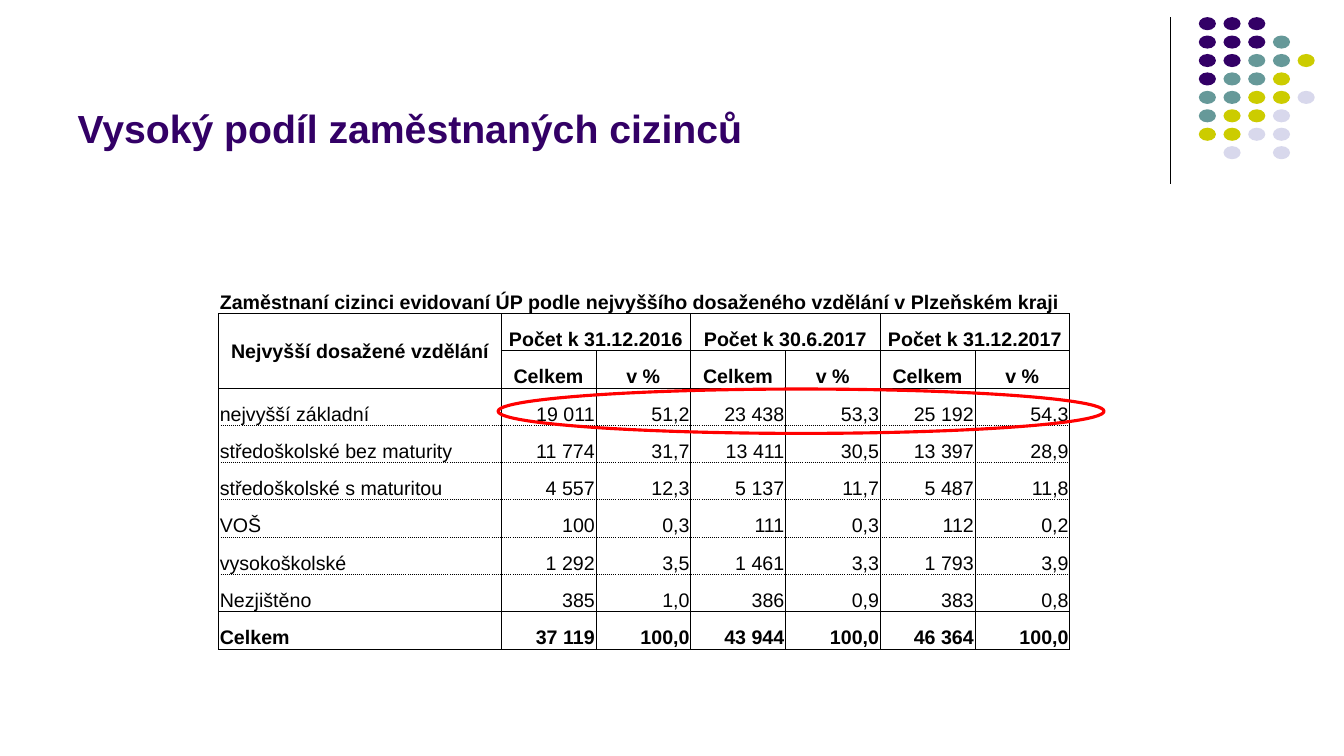
"""Build the slide on the education of employed foreigners."""
import pptx
import pptx.dml.color
import pptx.enum.shapes
import pptx.enum.text
import pptx.oxml
import pptx.oxml.ns
import pptx.util
from pptx.util import Inches

TITLE = "Vysoký podíl zaměstnaných cizinců"
HEADING = "Zaměstnaní cizinci evidovaní ÚP podle nejvyššího dosaženého vzdělání v Plzeňském kraji"
DATES = ["Počet k 31.12.2016", "Počet k 30.6.2017", "Počet k 31.12.2017"]
ROWS = [
    [HEADING] + [""] * 6,
    ["Nejvyšší dosažené vzdělání", DATES[0], "", DATES[1], "", DATES[2], ""],
    [""] + ["Celkem", "v %"] * 3,
    ["nejvyšší základní", "19 011", "51,2", "23 438", "53,3", "25 192", "54,3"],
    ["středoškolské bez maturity", "11 774", "31,7", "13 411", "30,5", "13 397", "28,9"],
    ["středoškolské s maturitou", "4 557", "12,3", "5 137", "11,7", "5 487", "11,8"],
    ["VOŠ", "100", "0,3", "111", "0,3", "112", "0,2"],
    ["vysokoškolské", "1 292", "3,5", "1 461", "3,3", "1 793", "3,9"],
    ["Nezjištěno", "385", "1,0", "386", "0,9", "383", "0,8"],
    ["Celkem", "37 119", "100,0", "43 944", "100,0", "46 364", "100,0"],
]
SPANS = [(0, 0, 0, 6), (1, 0, 2, 0), (1, 1, 1, 2), (1, 3, 1, 4), (1, 5, 1, 6)]
WIDTHS = [2.8] + [0.94] * 6
HEIGHTS = [0.65] + [0.37] * 9
DOTS = ["PPP", "PPPT", "PPTTY", "PTTY", "TTYYL", "TYYL", "YYLL", " L L"]
INKS = {"P": "330066", "T": "669999", "Y": "CCCC00", "L": "D8D8EC"}
FIRST, LAST = 3, len(ROWS) - 1
SHAPE = pptx.enum.shapes.MSO_SHAPE
ALIGN = pptx.enum.text.PP_ALIGN
ANCHOR = pptx.enum.text.MSO_ANCHOR


def tint(hue):
    return pptx.dml.color.RGBColor.from_string(hue)


def style(para, size, hue, bold, align):
    para.alignment = align
    for run in para.runs:
        font = run.font
        font.name, font.size, font.bold = "Arial", pptx.util.Pt(size), bold
        font.color.rgb = tint(hue)


def oval(slide, left, top, width, height):
    shape = slide.shapes.add_shape(
        SHAPE.OVAL, Inches(left), Inches(top), Inches(width), Inches(height))
    shape.shadow.inherit = False
    return shape


def border(cell, side, dash):
    ns = pptx.oxml.ns.nsdecls("a")
    if dash:
        body = ('<a:solidFill><a:srgbClr val="000000"/></a:solidFill>'
                f'<a:prstDash val="{dash}"/>')
    else:
        body = "<a:noFill/>"
    line = pptx.oxml.parse_xml(f'<a:ln{side} {ns} w="6350">{body}</a:ln{side}>')
    cell._tc.get_or_add_tcPr().append(line)


def edges(row):
    if row == 0:
        return {"L": None, "R": None, "T": None, "B": "solid"}
    top = "dot" if FIRST < row < LAST else "solid"
    base = "dot" if FIRST <= row < LAST - 1 else "solid"
    return {"L": "solid", "R": "solid", "T": top, "B": base}


def fill_cell(cell, text, row, col):
    cell.text_frame.text = text
    if 0 < row < FIRST:
        align = ALIGN.CENTER
    else:
        align = ALIGN.RIGHT if col else ALIGN.LEFT
    bold = row < FIRST or row == LAST
    style(cell.text_frame.paragraphs[0], 14, "000000", bold, align)
    cell.margin_left = cell.margin_right = cell.margin_top = Inches(0.01)
    cell.margin_bottom = 0
    middle = (row, col) == (1, 0)
    cell.vertical_anchor = ANCHOR.MIDDLE if middle else ANCHOR.BOTTOM
    for side, dash in edges(row).items():
        border(cell, side, dash)
    cell.fill.background()


def add_grid(slide):
    table = slide.shapes.add_table(
        len(ROWS), len(WIDTHS), Inches(2.17), Inches(2.46),
        Inches(sum(WIDTHS)), Inches(sum(HEIGHTS))).table
    table.first_row = table.horz_banding = False
    for column, width in zip(table.columns, WIDTHS):
        column.width = Inches(width)
    for line, height in zip(table.rows, HEIGHTS):
        line.height = Inches(height)
    for row, texts in enumerate(ROWS):
        for col, text in enumerate(texts):
            fill_cell(table.cell(row, col), text, row, col)
    for top, left, base, right in SPANS:
        table.cell(top, left).merge(table.cell(base, right))


def add_dots(slide):
    rule = slide.shapes.add_connector(
        pptx.enum.shapes.MSO_CONNECTOR.STRAIGHT,
        Inches(11.61), Inches(0.17), Inches(11.61), Inches(1.83))
    rule.line.color.rgb = tint("000000")
    rule.line.width = pptx.util.Pt(0.75)
    ns = pptx.oxml.ns.nsdecls("a")
    rule._element.spPr.append(pptx.oxml.parse_xml(f"<a:effectLst {ns}/>"))
    step, drop = (12.87 - 11.89) / 4, (1.45 - 0.17) / 7
    for row, marks in enumerate(DOTS):
        for col, mark in enumerate(marks):
            if mark in INKS:
                dot = oval(slide, 11.89 + col * step, 0.17 + row * drop, 0.17, 0.13)
                dot.fill.solid()
                dot.fill.fore_color.rgb = tint(INKS[mark])
                dot.line.fill.background()


def main():
    deck = pptx.Presentation()
    deck.slide_width, deck.slide_height = Inches(13.33), Inches(7.5)
    slide = deck.slides.add_slide(deck.slide_layouts[5])
    add_dots(slide)
    title = slide.shapes.title
    title.left, title.top = Inches(0.67), Inches(0.13)
    title.width, title.height = Inches(11), Inches(1.42)
    title.text_frame.text = TITLE
    title.text_frame.vertical_anchor = ANCHOR.BOTTOM
    style(title.text_frame.paragraphs[0], 28, "330066", True, ALIGN.LEFT)
    add_grid(slide)
    ring = oval(slide, 4.94, 3.86, 6.01, 0.44)
    ring.fill.background()
    ring.line.color.rgb = tint("FF0000")
    ring.line.width = pptx.util.Pt(2.25)
    deck.save("out.pptx")


if __name__ == "__main__":
    main()
